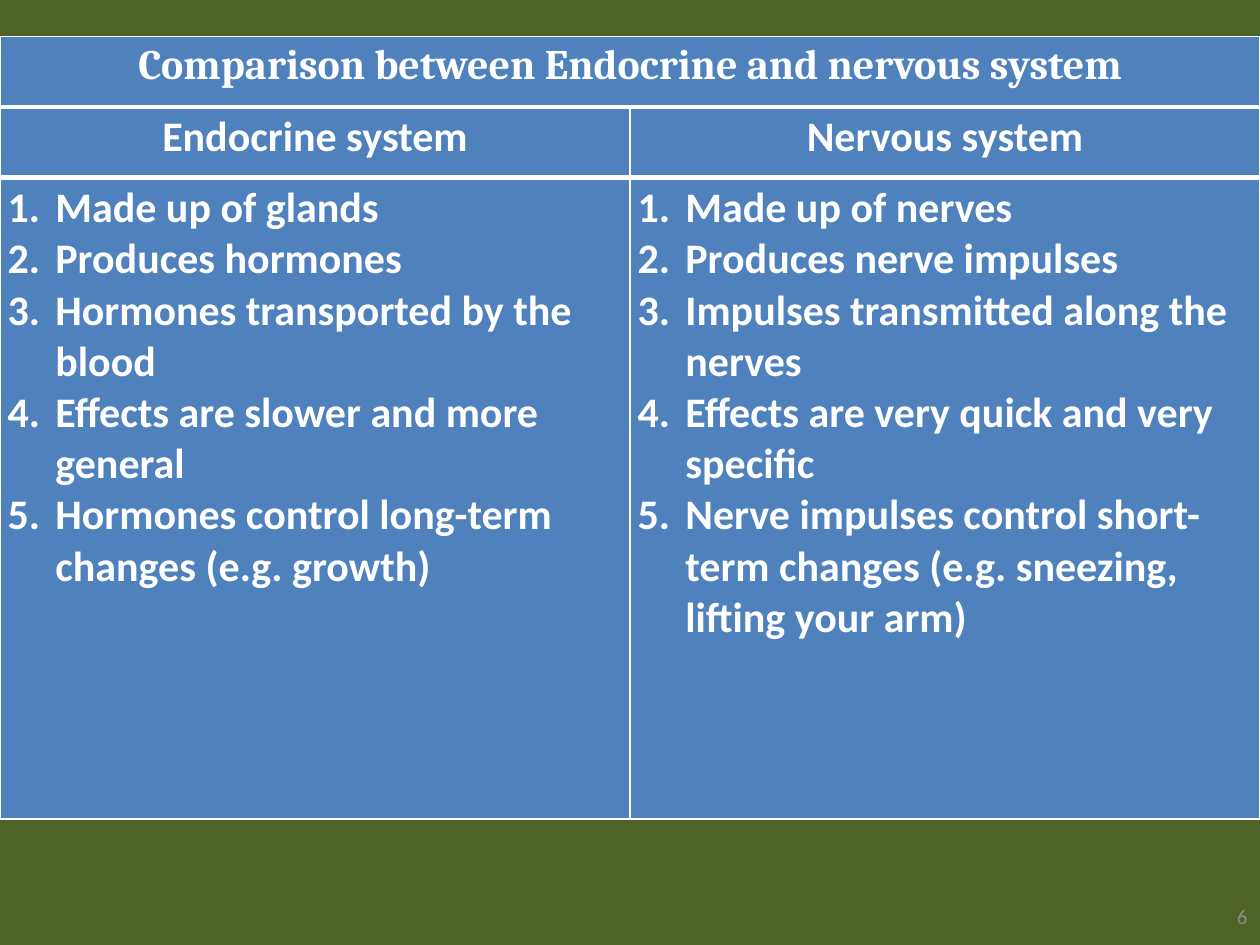
from dataclasses import dataclass

from lxml import etree
from pptx import Presentation
from pptx.dml.color import RGBColor
from pptx.enum.text import MSO_ANCHOR, PP_ALIGN
from pptx.oxml.ns import qn
from pptx.util import Inches, Pt

CENTER, RIGHT = PP_ALIGN.CENTER, PP_ALIGN.RIGHT
MIDDLE = MSO_ANCHOR.MIDDLE

OLIVE = RGBColor(0x4F, 0x62, 0x28)
BLUE = RGBColor(0x4F, 0x81, 0xBD)
WHITE = RGBColor(0xFF, 0xFF, 0xFF)
GRAY = RGBColor(0x8C, 0x8C, 0x8C)

THIN, THICK = Pt(1), Pt(3)
ROW_HEIGHTS = (0.56, 0.56, 5.09)


@dataclass
class BodySystem:
    heading: str
    features: list[str]


TITLE = "Comparison between Endocrine and nervous system"
SYSTEMS = [
    BodySystem("Endocrine system", [
        "Made up of glands",
        "Produces hormones",
        "Hormones transported by the blood",
        "Effects are slower and more general",
        "Hormones control long-term changes (e.g. growth)",
    ]),
    BodySystem("Nervous system", [
        "Made up of nerves",
        "Produces nerve impulses",
        "Impulses transmitted along the nerves",
        "Effects are very quick and very specific",
        "Nerve impulses control short-term changes (e.g. sneezing, lifting your arm)",
    ]),
]


def style_cell(cell, top: int, bottom: int) -> None:
    """Set the margins, white borders and blue fill of a cell."""
    cell.margin_left = cell.margin_right = Inches(0.06)
    cell.margin_top = cell.margin_bottom = Inches(0.04)
    properties = cell._tc.get_or_add_tcPr()
    for side, width in (("L", THIN), ("R", THIN), ("T", top), ("B", bottom)):
        border = etree.SubElement(properties, qn(f"a:ln{side}"), w=str(width))
        fill = etree.SubElement(border, qn("a:solidFill"))
        etree.SubElement(fill, qn("a:srgbClr"), val=str(WHITE))
    cell.fill.solid()
    cell.fill.fore_color.rgb = BLUE


def number_paragraph(paragraph) -> None:
    """Add a hanging automatic number to a paragraph."""
    properties = paragraph._p.get_or_add_pPr()
    properties.set("marL", str(Inches(0.38)))
    properties.set("indent", str(-Inches(0.38)))
    etree.SubElement(properties, qn("a:buFont"), typeface="+mj-lt")
    etree.SubElement(properties, qn("a:buAutoNum"), type="arabicPeriod")
    tabs = etree.SubElement(properties, qn("a:tabLst"))
    etree.SubElement(tabs, qn("a:tab"), pos=str(Inches(0.25)), algn="l")


def set_font(paragraph, name: str, size: int, color: RGBColor, bold: bool) -> None:
    font = paragraph.font
    font.name, font.size, font.bold = name, Pt(size), bold
    font.color.rgb = color


def write_heading(cell, text: str, font_name: str) -> None:
    cell.text = text
    paragraph = cell.text_frame.paragraphs[0]
    paragraph.alignment = CENTER
    set_font(paragraph, font_name, 24, WHITE, True)


def write_features(cell, features: list[str]) -> None:
    cell.text = "\n".join(features)
    for paragraph in cell.text_frame.paragraphs:
        number_paragraph(paragraph)
        set_font(paragraph, "Calibri", 24, WHITE, True)


def add_comparison(slide) -> None:
    table = slide.shapes.add_table(
        len(ROW_HEIGHTS), len(SYSTEMS),
        Inches(0), Inches(0.29), Inches(10), Inches(sum(ROW_HEIGHTS)),
    ).table
    # Thick rules separate the rows
    last = len(ROW_HEIGHTS) - 1
    for index, height in enumerate(ROW_HEIGHTS):
        table.rows[index].height = Inches(height)
        for cell in table.rows[index].cells:
            style_cell(cell, THIN if index == 0 else THICK,
                       THIN if index == last else THICK)

    # Title across both columns
    table.cell(0, 0).merge(table.cell(0, len(SYSTEMS) - 1))
    write_heading(table.cell(0, 0), TITLE, "Cambria")

    # One column per system
    for column, system in enumerate(SYSTEMS):
        write_heading(table.cell(1, column), system.heading, "Calibri")
        write_features(table.cell(2, column), system.features)


def add_page_number(slide, number: str) -> None:
    frame = slide.shapes.add_textbox(
        Inches(7.67), Inches(7.07), Inches(2.33), Inches(0.4)).text_frame
    frame.word_wrap = True
    frame.vertical_anchor = MIDDLE
    paragraph = frame.paragraphs[0]
    paragraph.text = number
    paragraph.alignment = RIGHT
    set_font(paragraph, "Calibri", 12, GRAY, False)


def main() -> None:
    presentation = Presentation()
    presentation.slide_width, presentation.slide_height = Inches(10), Inches(7.5)
    slide = presentation.slides.add_slide(presentation.slide_layouts[6])
    slide.background.fill.solid()
    slide.background.fill.fore_color.rgb = OLIVE
    add_comparison(slide)
    add_page_number(slide, "6")
    presentation.save("out.pptx")


if __name__ == "__main__":
    main()
